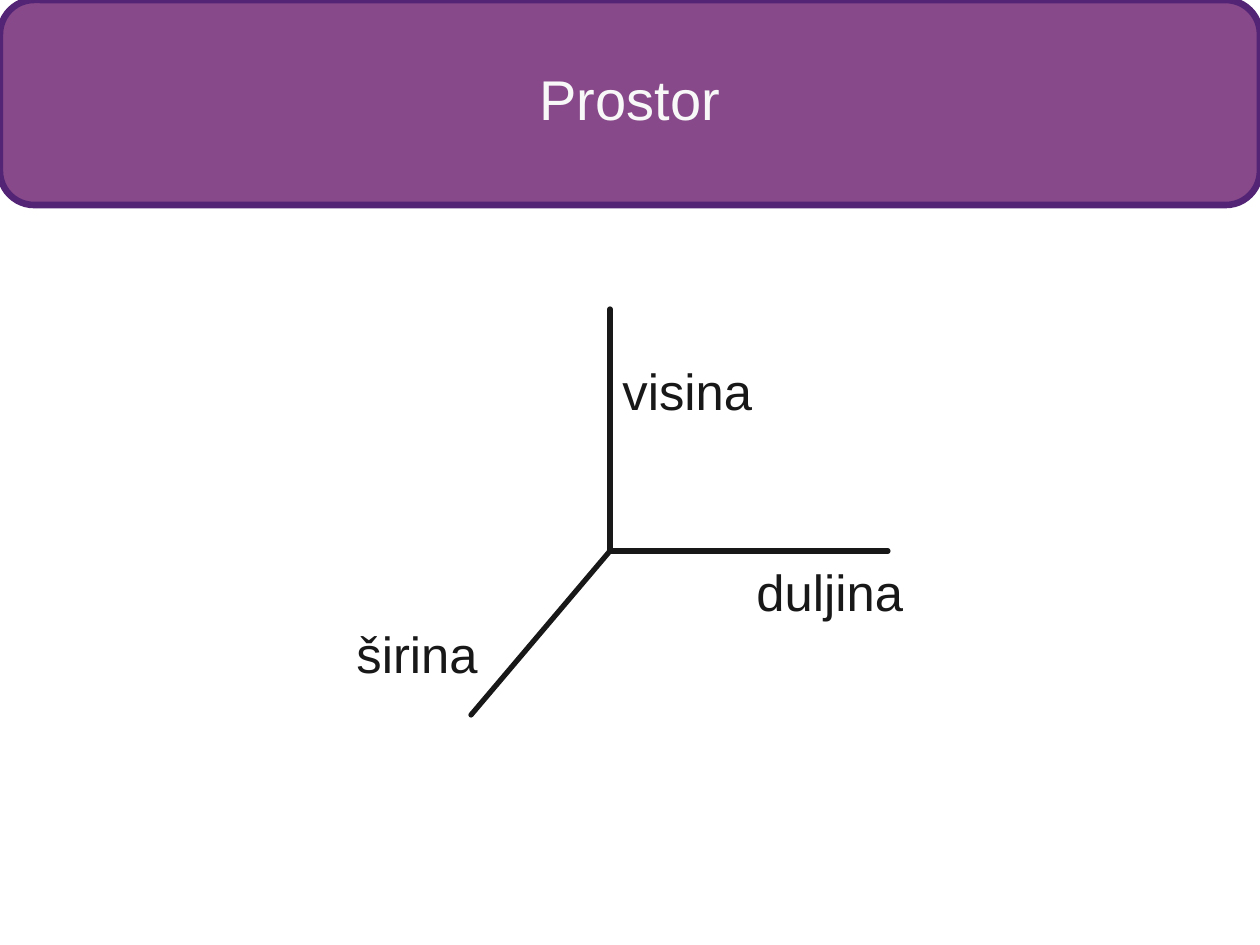
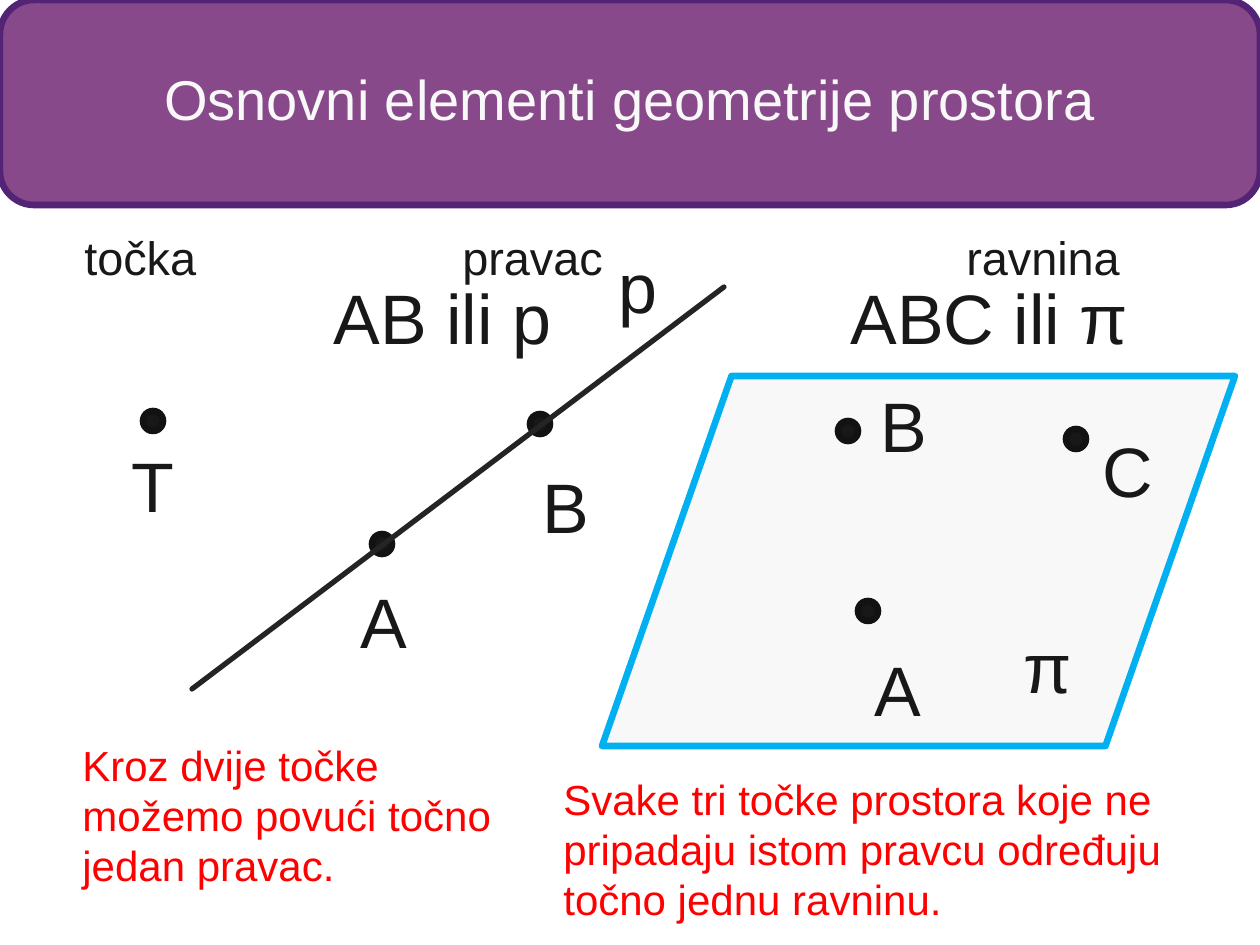
from collections import namedtuple

from lxml.etree import SubElement
from pptx import Presentation
from pptx.dml.color import RGBColor
from pptx.enum.shapes import MSO_CONNECTOR, MSO_SHAPE
from pptx.enum.text import MSO_ANCHOR, MSO_AUTO_SIZE, PP_ALIGN
from pptx.oxml.ns import qn
from pptx.util import Emu, Pt

Box = namedtuple("Box", "left top width height")

# Shared style
PURPLE = RGBColor(0x87, 0x49, 0x89)
DARK_PURPLE = RGBColor(0x53, 0x24, 0x76)
PALE = RGBColor(0xF8, 0xF8, 0xF8)
INK = RGBColor(0x18, 0x18, 0x18)
DOT_EDGE = RGBColor(0x12, 0x12, 0x12)
LINE_GREY = RGBColor(0x24, 0x24, 0x24)
BLUE = RGBColor(0x00, 0xB0, 0xF0)
RED = RGBColor(0xFF, 0x00, 0x00)
FONT = "Arial"
PAGE = Box(0, 0, 1260, 945)
DOT = 20
EDGE = 3.78
LETTER = 40
LETTER_HEIGHT = 97
TAB = 126


def px(length):
    return Emu(round(length * 914400 / 126))


def inside(box, left, top, width, height):
    return Box(box.left + left, box.top + top, width, height)


def add_text(page, box, text, size=LETTER, color=INK, wrap=False,
             align=PP_ALIGN.LEFT, anchor=MSO_ANCHOR.TOP, grow=True, before=0, tabs=0):
    frame = page.shapes.add_textbox(*map(px, box)).text_frame
    frame.word_wrap = wrap
    frame.auto_size = MSO_AUTO_SIZE.SHAPE_TO_FIT_TEXT if grow else MSO_AUTO_SIZE.NONE
    frame.vertical_anchor = anchor
    para = frame.paragraphs[0]
    para.alignment = align
    para.space_before = Pt(before)
    if tabs:
        tab_list = SubElement(para._p.get_or_add_pPr(), qn("a:tabLst"))
        for number in range(1, tabs + 1):
            SubElement(tab_list, qn("a:tab"), pos=str(px(number * TAB)), algn="l")
    span = para.add_run()
    span.text = text
    span.font.name = FONT
    span.font.size = Pt(size)
    span.font.color.rgb = color


def add_figure(page, preset, box, fill, edge):
    shape = page.shapes.add_shape(preset, *map(px, box))
    shape.shadow.inherit = False
    shape.fill.solid()
    shape.fill.fore_color.rgb = fill
    shape.line.color.rgb = edge
    shape.line.width = Pt(EDGE)
    return shape


def add_line(page, box, start, end, color=INK):
    ends = (box.left + start[0], box.top + start[1],
            box.left + end[0], box.top + end[1])
    line = page.shapes.add_connector(MSO_CONNECTOR.STRAIGHT, *map(px, ends))
    line.line.color.rgb = color
    line.line.width = Pt(3)
    line.line._get_or_add_ln().set("cap", "rnd")
    SubElement(line._element.spPr, qn("a:effectLst"))


def add_dots(page, box, centres):
    for x, y in centres:
        dot = inside(box, x - DOT / 2, y - DOT / 2, DOT, DOT)
        add_figure(page, MSO_SHAPE.OVAL, dot, INK, DOT_EDGE)


def add_letters(page, box, letters):
    for text, left, top, width in letters:
        add_text(page, inside(box, left, top, width, LETTER_HEIGHT), text)


def add_page(deck, title):
    page = deck.slides.add_slide(deck.slide_layouts[6])
    # Title band
    add_figure(page, MSO_SHAPE.ROUNDED_RECTANGLE,
               Box(0, 0, PAGE.width, 205), PURPLE, DARK_PURPLE)
    add_text(page, Box(0, 0, PAGE.width, 197), title, size=32, color=PALE,
             wrap=True, align=PP_ALIGN.CENTER, anchor=MSO_ANCHOR.MIDDLE, grow=False)
    return page


def draw_axes(page, box):
    origin = (266, 242)
    for end in ((266, 0), (544, 242), (127, 406)):
        add_line(page, box, end, origin)
    for name, left, top, width in (("visina", 266, 45, 156),
                                   ("duljina", 400, 246, 174),
                                   ("širina", 0, 308, 147)):
        add_text(page, inside(box, left, top, width, 74), name, size=29)


def draw_point(page, box):
    add_dots(page, box, [(33, 16)])
    add_letters(page, box, [("T", -1, 31, 68)])


def draw_straight_line(page, box):
    add_dots(page, box, [(190, 276), (348, 156)])
    add_line(page, box, (0, 421), (532, 19), color=LINE_GREY)
    add_letters(page, box, [("AB ili p", 129, 0, 246), ("p", 414, -31, 64),
                            ("A", 156, 304, 73), ("B", 338, 189, 73)])


def draw_plane(page, box):
    plane = add_figure(page, MSO_SHAPE.PARALLELOGRAM,
                       inside(box, 0, 108, box.width, 370), PALE, BLUE)
    plane.adjustments[0] = 0.35
    add_dots(page, box, [(246, 163), (474, 171), (266, 343)])
    add_letters(page, box, [("ABC ili π", 236, 0, 306), ("B", 266, 108, 73),
                            ("C", 488, 153, 77), ("A", 260, 372, 73),
                            ("π", 409, 349, 74)])


def main():
    deck = Presentation()
    deck.slide_width, deck.slide_height = px(PAGE.width), px(PAGE.height)

    # Space and its three dimensions
    page = add_page(deck, "Prostor")
    draw_axes(page, Box(344, 309, 575, 407))

    # Point, line and plane
    page = add_page(deck, "Osnovni elementi geometrije prostora")
    draw_plane(page, Box(602, 268, 633, 478))
    add_text(page, Box(72, 222, 1134, 63), "točka\t\t\tpravac\t\t\travnina",
             size=26.8, wrap=True, grow=False, before=5, tabs=7)
    draw_point(page, Box(120, 405, 68, 128))
    draw_straight_line(page, Box(192, 268, 532, 421))

    # Rules
    for box, rule in (
        (Box(70, 733, 447, 165), "Kroz dvije točke možemo povući točno jedan pravac."),
        (Box(551, 767, 709, 165), "Svake tri točke prostora koje ne pripadaju istom "
                                  "pravcu određuju točno jednu ravninu."),
    ):
        add_text(page, box, rule, size=24, color=RED, wrap=True)

    deck.save("out.pptx")


if __name__ == "__main__":
    main()
